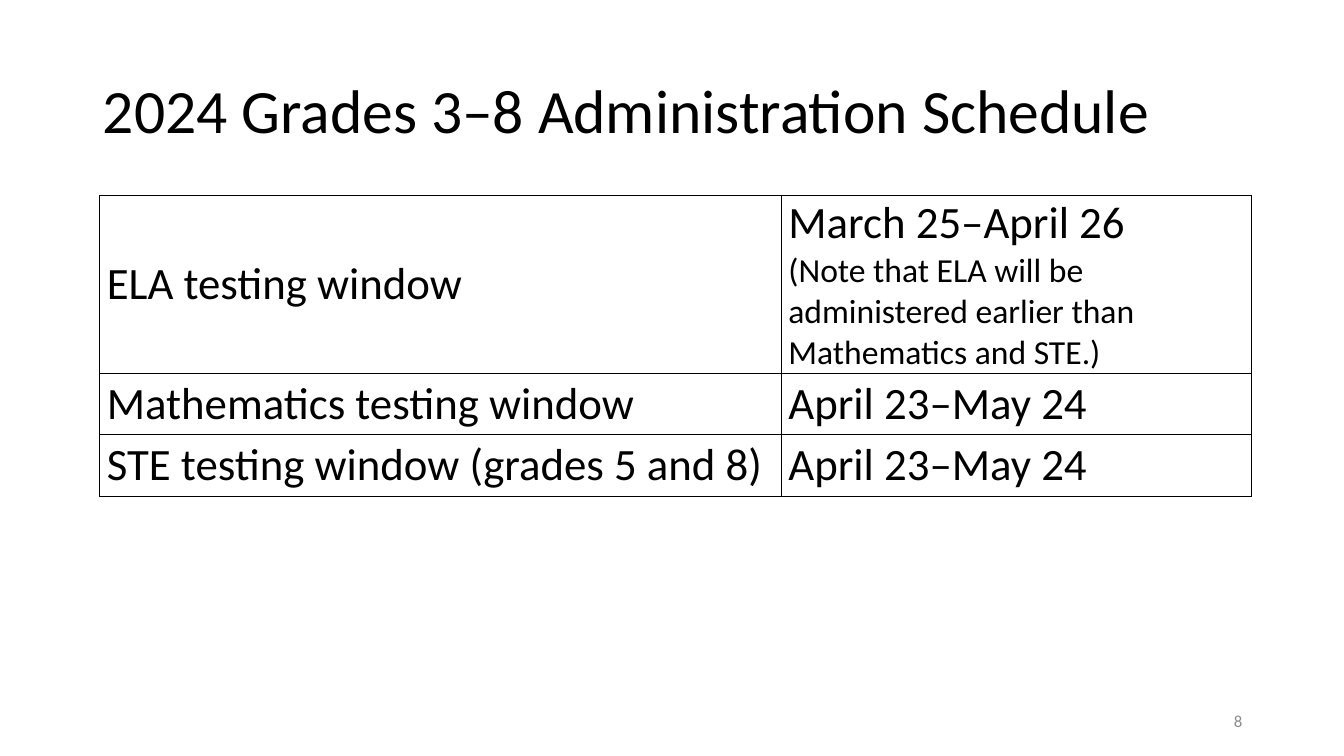
from lxml import etree
from pptx import Presentation
from pptx import util as u
from pptx.dml.color import RGBColor
from pptx.enum import text
from pptx.oxml import ns

BLACK = RGBColor(0x00, 0x00, 0x00)
GRAY = RGBColor(0x8C, 0x8C, 0x8C)
FONT = "Calibri"
WIDE, HIGH = u.Inches(13.33), u.Inches(7.5)
COLS = (6.76, 4.66)
ROWS = (1.76, 0.61, 0.61)
DATES = (
    ("ELA testing window",
     "March 25–April 26\n(Note that ELA will be administered earlier than "
     "Mathematics and STE.)"),
    ("Mathematics testing window", "April 23–May 24"),
    ("STE testing window (grades 5 and 8)", "April 23–May 24"),
)


def style(par, size, color=BLACK):
    for run in par.runs:
        run.font.name = FONT
        run.font.size = u.Pt(size)
        run.font.color.rgb = color


def add_title(slide, words):
    title = slide.shapes.title
    title.left, title.top = u.Inches(0.92), u.Inches(0.4)
    title.width, title.height = u.Inches(11.5), u.Inches(1.45)
    frame = title.text_frame
    frame.text = words
    frame.vertical_anchor = text.MSO_ANCHOR.MIDDLE
    par = frame.paragraphs[0]
    par.alignment = text.PP_ALIGN.LEFT
    par.line_spacing = 0.9
    style(par, 44)


def add_number(slide, number):
    box = slide.shapes.add_textbox(
        u.Inches(9.42), u.Inches(6.95), u.Inches(3), u.Inches(0.4))
    frame = box.text_frame
    frame.word_wrap = True
    frame.vertical_anchor = text.MSO_ANCHOR.MIDDLE
    frame.text = number
    par = frame.paragraphs[0]
    par.alignment = text.PP_ALIGN.RIGHT
    style(par, 12, GRAY)


def add_border(cell):
    """Draw a thin black line on all four sides of the cell."""
    props = cell._tc.get_or_add_tcPr()
    for side in ("a:lnL", "a:lnR", "a:lnT", "a:lnB"):
        line = etree.SubElement(props, ns.qn(side), w=str(u.Pt(1)))
        fill = etree.SubElement(line, ns.qn("a:solidFill"))
        etree.SubElement(fill, ns.qn("a:srgbClr"), val=str(BLACK))


def fill_cell(cell, words):
    """Write the first paragraph large and any note below it smaller."""
    add_border(cell)
    cell.fill.background()
    cell.vertical_anchor = text.MSO_ANCHOR.MIDDLE
    cell.margin_left = cell.margin_right = u.Inches(0.07)
    cell.margin_top = cell.margin_bottom = 0
    cell.text_frame.text = words
    for i, par in enumerate(cell.text_frame.paragraphs):
        style(par, 24 if i else 32)


def add_dates(slide):
    table = slide.shapes.add_table(
        len(ROWS), len(COLS), u.Inches(0.99), u.Inches(1.94),
        u.Inches(sum(COLS)), u.Inches(sum(ROWS))).table
    table.first_row = table.horz_banding = False
    for col, width in zip(table.columns, COLS):
        col.width = u.Inches(width)
    for row, height, line in zip(table.rows, ROWS, DATES):
        row.height = u.Inches(height)
        for cell, words in zip(row.cells, line):
            fill_cell(cell, words)


def main():
    deck = Presentation()
    deck.slide_width, deck.slide_height = WIDE, HIGH
    slide = deck.slides.add_slide(deck.slide_layouts.get_by_name("Title Only"))
    add_title(slide, "2024 Grades 3–8 Administration Schedule")
    add_dates(slide)
    add_number(slide, "8")
    deck.save("out.pptx")


if __name__ == "__main__":
    main()
